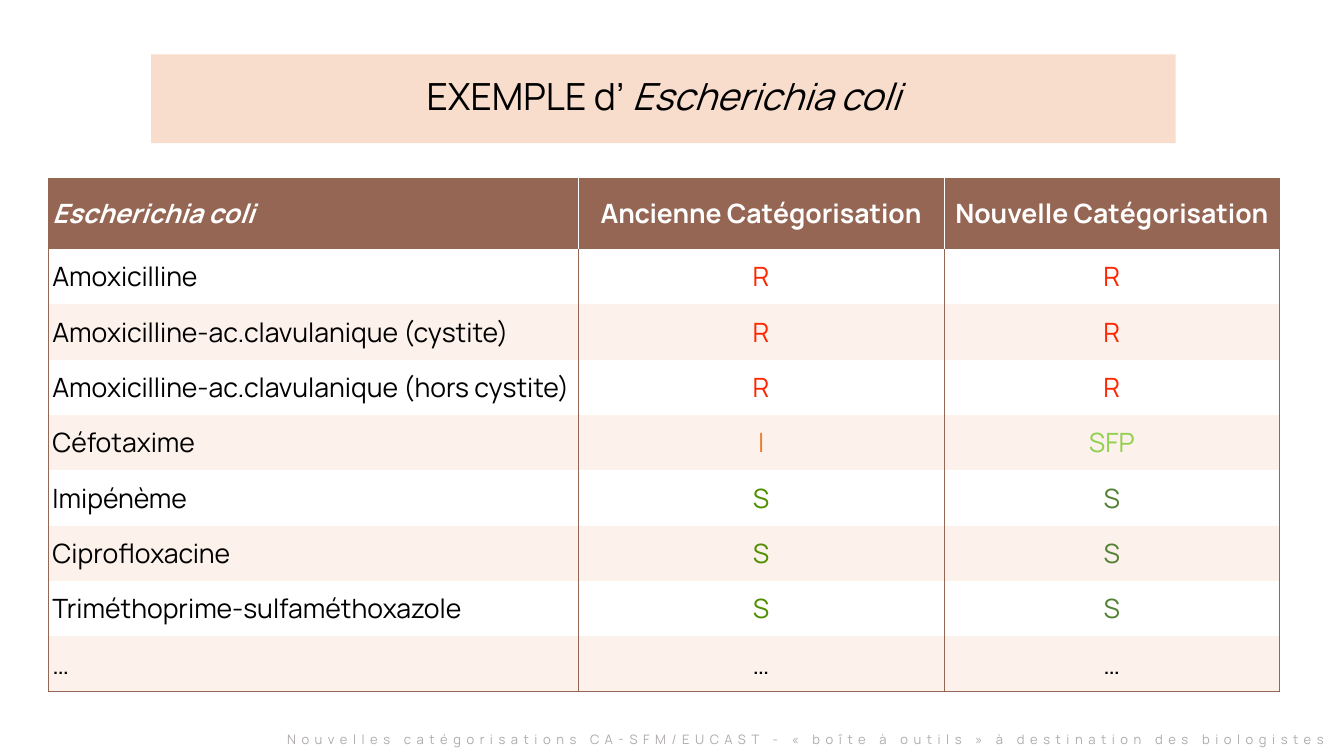
"""Build the slide comparing old and new Escherichia coli categories."""
import pptx
import pptx.dml.color
import pptx.enum.shapes
import pptx.enum.text
import pptx.oxml
import pptx.oxml.ns
import pptx.util

SLIDE_WIDTH = pptx.util.Inches(13.33)
SLIDE_HEIGHT = pptx.util.Inches(7.5)
FONT = "Manrope"
PLAIN_TABLE_STYLE = "{2D5ABB26-0587-4C30-8999-92F81FD0307C}"
COLORS = {
    "black": "000000",
    "white": "FFFFFF",
    "brown": "956654",
    "peach": "F8DDCC",
    "band": "FDF2EB",
    "red": "FF2600",
    "orange": "ED7D31",
    "lime": "92D050",
    "green": "4F8F00",
    "forest": "548235",
    "grey": "AFABAB",
}
ALIGN = pptx.enum.text.PP_ALIGN
MIDDLE = pptx.enum.text.MSO_ANCHOR.MIDDLE
COLUMN_SHARES = (39.38, 27.3, 24.9)
HEADER_SHARE = 9.33
ROW_SHARE = 7.32
HEADERS = ("Escherichia coli", "Ancienne Catégorisation", "Nouvelle Catégorisation")
ANTIBIOTICS = (
    ("Amoxicilline", "R", "red", "R", "red"),
    ("Amoxicilline-ac.clavulanique (cystite)", "R", "red", "R", "red"),
    ("Amoxicilline-ac.clavulanique (hors cystite)", "R", "red", "R", "red"),
    ("Céfotaxime", "I", "orange", "SFP", "lime"),
    ("Imipénème", "S", "green", "S", "forest"),
    ("Ciprofloxacine", "S", "green", "S", "forest"),
    ("Triméthoprime-sulfaméthoxazole", "S", "green", "S", "forest"),
    ("…", "…", "black", "…", "black"),
)


def across(share):
    """Return a percentage of the slide width."""
    return round(SLIDE_WIDTH * share / 100)


def down(share):
    """Return a percentage of the slide height."""
    return round(SLIDE_HEIGHT * share / 100)


def color(name):
    """Return a palette colour."""
    return pptx.dml.color.RGBColor.from_string(COLORS[name])


def set_values(target, values):
    """Set each named attribute of the target."""
    for name, value in values.items():
        setattr(target, name, value)


def add_run(paragraph, text, size, color_name, **styles):
    """Append a formatted run to a paragraph."""
    run = paragraph.add_run()
    run.text = text
    set_values(run.font, {"name": FONT, "size": pptx.util.Pt(size), **styles})
    run.font.color.rgb = color(color_name)
    return run


def add_title(slide):
    """Add the title banner."""
    banner = slide.shapes.add_shape(
        pptx.enum.shapes.MSO_SHAPE.RECTANGLE,
        across(11.25), down(7.2), across(76.22), down(11.75))
    banner.shadow.inherit = False
    banner.fill.solid()
    banner.fill.fore_color.rgb = color("peach")
    banner.line.fill.background()
    set_values(banner.text_frame, {"word_wrap": True, "vertical_anchor": MIDDLE})
    paragraph = banner.text_frame.paragraphs[0]
    set_values(paragraph, {"alignment": ALIGN.CENTER, "line_spacing": 0.9})
    add_run(paragraph, "EXEMPLE d’ ", 26.7, "black")
    add_run(paragraph, "Escherichia coli", 26.7, "black", italic=True)


def set_borders(cell, borders):
    """Draw thin borders, given as pairs of side letter and colour name."""
    properties = cell._tc.get_or_add_tcPr()
    for position, (side, color_name) in enumerate(borders):
        line = pptx.oxml.parse_xml(
            f'<a:ln{side} {pptx.oxml.ns.nsdecls("a")} w="3175"><a:solidFill>'
            f'<a:srgbClr val="{COLORS[color_name]}"/></a:solidFill></a:ln{side}>')
        properties.insert(position, line)


def fill_cell(cell, column, text, text_color, fill, space_before, borders, **styles):
    """Write and format one table cell."""
    inset = pptx.util.Inches(0.04)
    sides = ("left", "right", "top", "bottom")
    set_values(cell, {f"margin_{side}": inset for side in sides})
    cell.vertical_anchor = MIDDLE
    if fill:
        cell.fill.solid()
        cell.fill.fore_color.rgb = color(fill)
    else:
        cell.fill.background()
    paragraph = cell.text_frame.paragraphs[0]
    set_values(paragraph, {
        "alignment": ALIGN.CENTER if column else ALIGN.LEFT,
        "space_before": pptx.util.Pt(space_before),
    })
    add_run(paragraph, text, 19, text_color, **styles)
    set_borders(cell, borders)


def add_category_table(slide):
    """Add the table of antibiotics and their categories."""
    last_row = len(ANTIBIOTICS)
    last_column = len(HEADERS) - 1
    table = slide.shapes.add_table(
        last_row + 1, len(HEADERS), across(3.6), down(23.6),
        across(sum(COLUMN_SHARES)), down(HEADER_SHARE + last_row * ROW_SHARE)).table
    set_values(table, {"first_row": False, "horz_banding": False})
    style = table._tbl.tblPr.find(pptx.oxml.ns.qn("a:tableStyleId"))
    style.text = PLAIN_TABLE_STYLE
    for column, share in enumerate(COLUMN_SHARES):
        table.columns[column].width = across(share)
    for row in range(last_row + 1):
        table.rows[row].height = down(ROW_SHARE if row else HEADER_SHARE)
    for column, header in enumerate(HEADERS):
        borders = [("L", "white" if column else "brown"),
                   ("R", "white" if column < last_column else "brown")]
        fill_cell(table.cell(0, column), column, header, "white", "brown", 24,
                  borders, bold=True, italic=column == 0)
    for row, (name, old, old_color, new, new_color) in enumerate(ANTIBIOTICS, 1):
        fill = None if row % 2 else "band"
        borders = [("L", "brown"), ("R", "brown")]
        if row == last_row:
            borders.append(("B", "brown"))
        entries = ((name, "black"), (old, old_color), (new, new_color))
        for column, (text, text_color) in enumerate(entries):
            fill_cell(table.cell(row, column), column, text, text_color, fill, 4, borders)


def add_footer(slide):
    """Add the letter-spaced footer."""
    frame = slide.shapes.add_textbox(
        across(4.88), down(96), across(94.45), down(3.47)).text_frame
    set_values(frame, {
        "word_wrap": True,
        "vertical_anchor": pptx.enum.text.MSO_ANCHOR.BOTTOM,
    })
    paragraph = frame.paragraphs[0]
    paragraph.alignment = ALIGN.RIGHT
    run = add_run(
        paragraph,
        "Nouvelles catégorisations CA-SFM/EUCAST - « boîte à outils » "
        "à destination des biologistes", 9.3, "grey")
    run._r.get_or_add_rPr().set("spc", "400")


def main():
    """Build and save the presentation."""
    presentation = pptx.Presentation()
    set_values(presentation, {"slide_width": SLIDE_WIDTH, "slide_height": SLIDE_HEIGHT})
    slide = presentation.slides.add_slide(presentation.slide_layouts[6])
    add_category_table(slide)
    add_title(slide)
    add_footer(slide)
    presentation.save("out.pptx")


if __name__ == "__main__":
    main()
